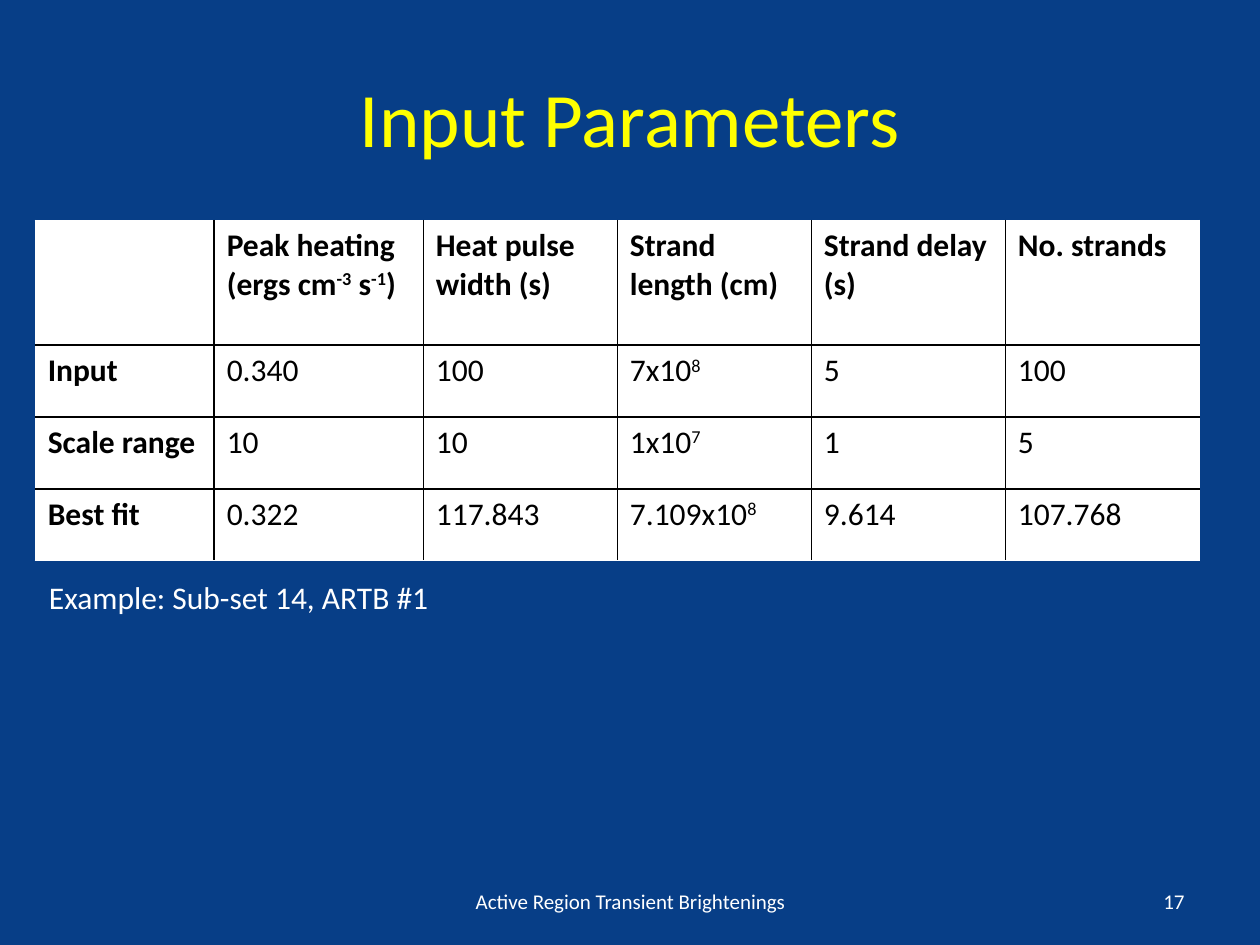
from lxml.etree import SubElement as Sub
from pptx import Presentation
from pptx.dml.color import RGBColor
from pptx.enum.text import MSO_ANCHOR as Anchor, PP_ALIGN as Align
from pptx.oxml.ns import qn
from pptx.util import Inches, Pt

NAVY = RGBColor(0x07, 0x3E, 0x87)
YELLOW = RGBColor(0xFF, 0xFF, 0x00)
WHITE = RGBColor(0xFF, 0xFF, 0xFF)
BLACK = RGBColor(0x00, 0x00, 0x00)


def write(para, text, size, color, bold=False):
    for i, part in enumerate(text.split("^")):
        run = para.add_run()
        run.text = part
        font = run.font
        font.name, font.size, font.bold = "Calibri", Pt(size), bold
        font.color.rgb = color
        if i % 2:
            font._element.set("baseline", "30000")


def edge(cell, side, color):
    line = Sub(cell._tc.get_or_add_tcPr(), qn("a:ln" + side), w=str(Pt(1)))
    fill = Sub(line, qn("a:solidFill"))
    Sub(fill, qn("a:srgbClr"), val=str(color))


deck = Presentation()
deck.slide_width, deck.slide_height = Inches(10), Inches(7.5)
slide = deck.slides.add_slide(deck.slide_layouts[5])
back = slide.background.fill
back.solid()
back.fore_color.rgb = NAVY

title = slide.shapes.title
title.left, title.top = Inches(0.5), Inches(0.3)
title.width, title.height = Inches(9), Inches(1.25)
title.text_frame.vertical_anchor = Anchor.MIDDLE
head = title.text_frame.paragraphs[0]
head.alignment = Align.CENTER
write(head, "Input Parameters", 44, YELLOW)

# "^" toggles superscript
rows = [
    ["", "Peak heating\n(ergs cm^-3^ s^-1^)", "Heat pulse width (s)",
     "Strand length (cm)", "Strand delay (s)", "No. strands"],
    ["Input", "0.340", "100", "7x10^8", "5", "100"],
    ["Scale range", "10", "10", "1x10^7", "1", "5"],
    ["Best fit", "0.322", "117.843", "7.109x10^8", "9.614", "107.768"],
]
wide = [1.42, 1.66] + [1.54] * 4
high = [0.99] + [0.57] * 3
table = slide.shapes.add_table(
    len(high), len(wide), Inches(0.28), Inches(1.75),
    Inches(sum(wide)), Inches(sum(high))).table
for col, width in zip(table.columns, wide):
    col.width = Inches(width)
for row, height in zip(table.rows, high):
    row.height = Inches(height)

for r, row in enumerate(rows):
    for c, text in enumerate(row):
        cell = table.cell(r, c)
        outer = {"L": c == 0, "R": c == len(wide) - 1,
                 "T": r == 0, "B": r == len(high) - 1}
        for side, rim in outer.items():
            edge(cell, side, WHITE if rim else BLACK)
        cell.fill.solid()
        cell.fill.fore_color.rgb = WHITE
        frame = cell.text_frame
        for i, line in enumerate(text.split("\n")):
            para = frame.add_paragraph() if i else frame.paragraphs[0]
            write(para, line, 18, BLACK, r == 0 or c == 0)

notes = [
    ("Active Region Transient Brightenings", 3.42, 6.95, 3.17, 12,
     Align.CENTER, Anchor.MIDDLE),
    ("17", 7.17, 6.95, 2.33, 12, Align.RIGHT, Anchor.MIDDLE),
    ("Example: Sub-set 14, ARTB #1", 0.29, 4.54, 5.43, 18,
     Align.LEFT, Anchor.TOP),
]
for text, left, top, width, size, align, anchor in notes:
    box = slide.shapes.add_textbox(
        Inches(left), Inches(top), Inches(width), Inches(0.4))
    frame = box.text_frame
    frame.word_wrap = True
    frame.vertical_anchor = anchor
    para = frame.paragraphs[0]
    para.alignment = align
    write(para, text, size, WHITE)

deck.save("out.pptx")
